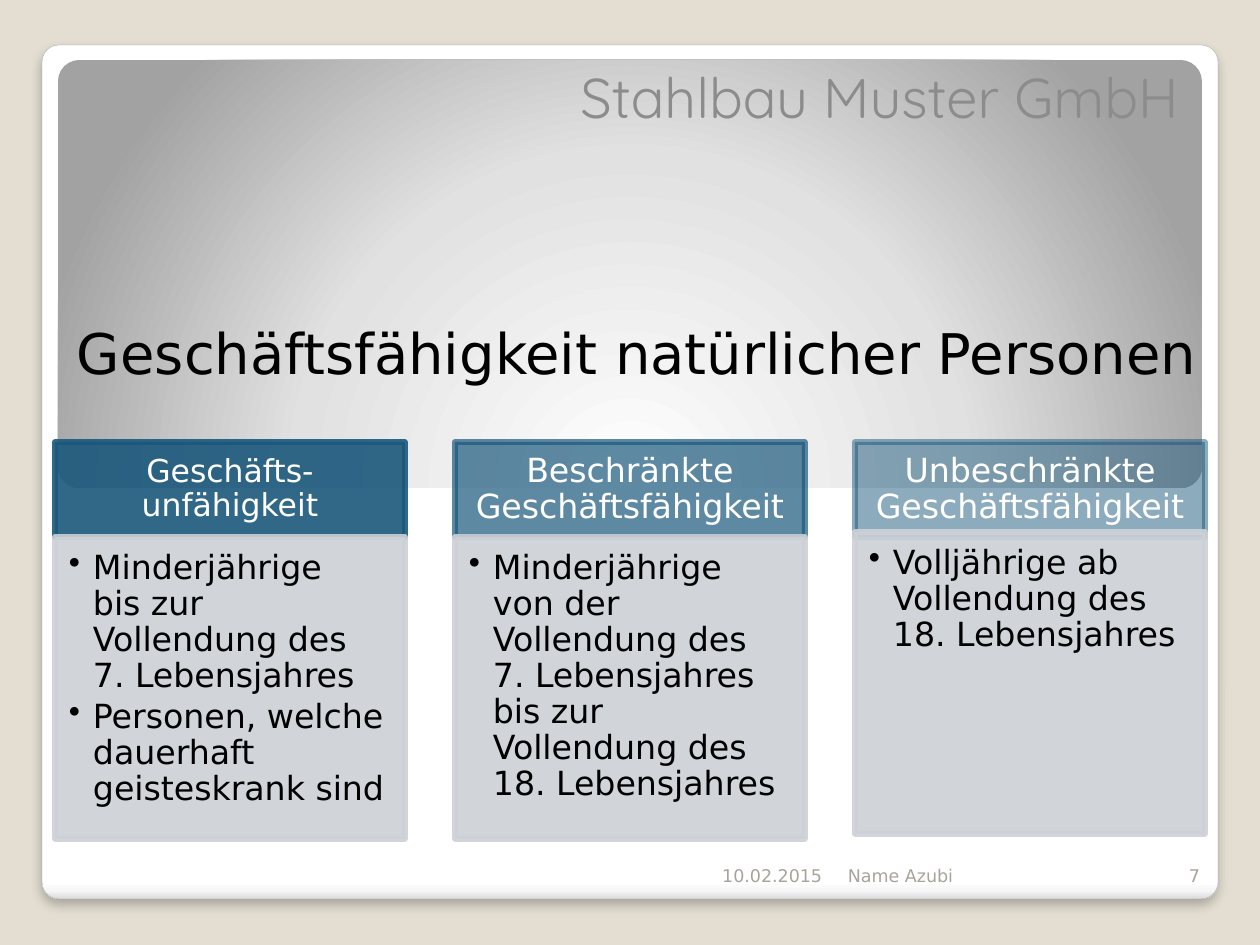
from dataclasses import dataclass

from lxml import etree
from pptx import Presentation
from pptx import util as u
from pptx.dml.color import RGBColor
from pptx.enum import shapes, text
from pptx.oxml.ns import qn

PX = 914400 / 126


@dataclass(frozen=True)
class Theme:
    font: str = "DejaVu Sans"
    company_font: str = "Quicksand"
    backdrop: str = "E3DED1"
    black: str = "000000"
    white: str = "FFFFFF"
    frame: str = "A4A4A4"
    company: str = "8C8C8C"
    footer: str = "A8A49B"
    header: str = "1B587C"
    body: str = "CDD1D7"
    title_size: int = 32
    text_size: int = 19
    small_header_size: int = 18
    footer_size: int = 10
    border: float = 3.35


THEME = Theme()
CARD_GRADIENT = [(0, "FFFFFF"), (98, "FFFFFF"), (99, "F7F7F7"), (100, "DADADA")]
BANNER_GRADIENT = [(0, "FFFFFF"), (55, "E1E1E1"), (100, "A2A2A2")]

# Header, header size, header opacity, top of the body, bullet texts
COLUMNS = [
    ("Geschäfts-unfähigkeit", THEME.small_header_size, 90, 537,
     ["Minderjährige\vbis zur Vollendung des 7. Lebensjahres",
      "Personen, welche dauerhaft geisteskrank sind"]),
    ("Beschränkte Geschäftsfähigkeit", THEME.text_size, 70, 537,
     ["Minderjährige von der Vollendung des 7. Lebensjahres "
      "bis zur Vollendung des 18. Lebensjahres"]),
    ("Unbeschränkte Geschäftsfähigkeit", THEME.text_size, 50, 532,
     ["Volljährige ab Vollendung des 18. Lebensjahres"]),
]
COLUMN_LEFT, COLUMN_PITCH, COLUMN_WIDTH = 55, 400, 350
HEADER_TOP, HEADER_HEIGHT, BODY_HEIGHT = 442, 95, 302


def px(length):
    return u.Emu(round(length * PX))


def rgb(code):
    return RGBColor.from_string(code)


def add_xml(parent, tag, **attributes):
    values = {name: str(value) for name, value in attributes.items()}
    return etree.SubElement(parent, qn(tag), values)


def add_block(page, kind, area):
    block = page.shapes.add_shape(kind, *map(px, area))
    block.shadow.inherit = False
    return block


def set_gradient(shape, stops, focus=None):
    """Fill from top to bottom, or in circles around focus (l, t, r, b in percent)."""
    shape.fill.gradient()
    gradient = shape.element.spPr.find(qn("a:gradFill"))
    for child in list(gradient):
        gradient.remove(child)
    stop_list = add_xml(gradient, "a:gsLst")
    for place, color in stops:
        stop = add_xml(stop_list, "a:gs", pos=place * 1000)
        add_xml(stop, "a:srgbClr", val=color)
    if focus:
        circle = add_xml(gradient, "a:path", path="circle")
        sides = {side: share * 1000 for side, share in zip("ltrb", focus)}
        add_xml(circle, "a:fillToRect", **sides)
    else:
        add_xml(gradient, "a:lin", ang=90 * 60000, scaled=0)


def add_shadow(shape):
    effects = shape.element.spPr.find(qn("a:effectLst"))
    shadow = add_xml(effects, "a:outerShdw", blurRad=u.Pt(6), dist=u.Pt(4),
                     dir=90 * 60000, algn="t", rotWithShape=0)
    color = add_xml(shadow, "a:srgbClr", val=THEME.black)
    add_xml(color, "a:alpha", val=25000)


def set_translucent(shape, color, opacity):
    """Give fill and outline the same color and opacity."""
    shape.fill.solid()
    shape.fill.fore_color.rgb = rgb(color)
    shape.line.color.rgb = rgb(color)
    shape.line.width = u.Pt(THEME.border)
    for tone in shape.element.spPr.iter(qn("a:srgbClr")):
        add_xml(tone, "a:alpha", val=opacity * 1000)


def write(shape, paragraphs, size, color, font=THEME.font, align=text.PP_ALIGN.LEFT,
          anchor=text.MSO_ANCHOR.TOP, insets=(13, 6, 13, 6), spacing=None, bullets=False):
    frame = shape.text_frame
    frame.word_wrap = True
    frame.vertical_anchor = anchor
    (frame.margin_left, frame.margin_top,
     frame.margin_right, frame.margin_bottom) = map(px, insets)
    for index, wording in enumerate(paragraphs):
        para = frame.paragraphs[0] if index == 0 else frame.add_paragraph()
        para.text = wording
        para.alignment = align
        para.line_spacing = spacing
        para.font.size = u.Pt(size)
        for span in para.runs:
            span.font.size = u.Pt(size)
            span.font.name = font
            span.font.color.rgb = rgb(color)
        if bullets:
            para.space_after = u.Pt(3)
            properties = para._p.get_or_add_pPr()
            properties.set("marL", str(px(24)))
            properties.set("indent", str(-px(24)))
            add_xml(properties, "a:buChar", char="•")


def add_label(page, area, wording, size, color, **options):
    box = page.shapes.add_textbox(*map(px, area))
    write(box, [wording], size, color, **options)


def add_background(page):
    page.background.fill.solid()
    page.background.fill.fore_color.rgb = rgb(THEME.backdrop)
    rounded = shapes.MSO_SHAPE.ROUNDED_RECTANGLE
    card = add_block(page, rounded, (42, 45, 1176, 854))
    card.adjustments[0] = 0.02
    set_gradient(card, CARD_GRADIENT)
    card.line.color.rgb = rgb(THEME.frame)
    card.line.width = u.Pt(0.16)
    add_shadow(card)
    banner = add_block(page, rounded, (58, 60, 1144, 428))
    banner.adjustments[0] = 0.05
    set_gradient(banner, BANNER_GRADIENT, focus=(50, 175, 50, -75))
    banner.line.fill.background()


def add_footer(page):
    right, left = text.PP_ALIGN.RIGHT, text.PP_ALIGN.LEFT
    for start, width, wording, align in [(520, 315, "10.02.2015", right),
                                         (835, 315, "Name Azubi", left),
                                         (1150, 63, "7", right)]:
        add_label(page, (start, 842, width, 50), wording, THEME.footer_size,
                  THEME.footer, align=align, anchor=text.MSO_ANCHOR.BOTTOM)


def add_column(page, left, title, title_size, opacity, body_top, points):
    rectangle = shapes.MSO_SHAPE.RECTANGLE
    header = add_block(page, rectangle, (left, HEADER_TOP, COLUMN_WIDTH, HEADER_HEIGHT))
    set_translucent(header, THEME.header, opacity)
    write(header, [title], title_size, THEME.white, align=text.PP_ALIGN.CENTER,
          anchor=text.MSO_ANCHOR.MIDDLE, insets=(18, 10, 18, 10), spacing=0.9)
    body = add_block(page, rectangle, (left, body_top, COLUMN_WIDTH, BODY_HEIGHT))
    set_translucent(body, THEME.body, 90)
    write(body, points, THEME.text_size, THEME.black, insets=(14, 14, 19, 21),
          spacing=0.9, bullets=True)


def main():
    deck = Presentation()
    deck.slide_width, deck.slide_height = px(1260), px(945)
    page = deck.slides.add_slide(deck.slide_layouts[6])
    add_background(page)
    add_footer(page)
    add_label(page, (471, 37, 714, 99), "Stahlbau Muster GmbH", THEME.title_size,
              THEME.company, font=THEME.company_font, align=text.PP_ALIGN.RIGHT,
              anchor=text.MSO_ANCHOR.BOTTOM, insets=(6, 6, 6, 6))
    add_label(page, (64, 312, 1166, 81), "Geschäftsfähigkeit natürlicher Personen",
              THEME.title_size, THEME.black)
    for index, column in enumerate(COLUMNS):
        add_column(page, COLUMN_LEFT + index * COLUMN_PITCH, *column)
    deck.save("out.pptx")


if __name__ == "__main__":
    main()
